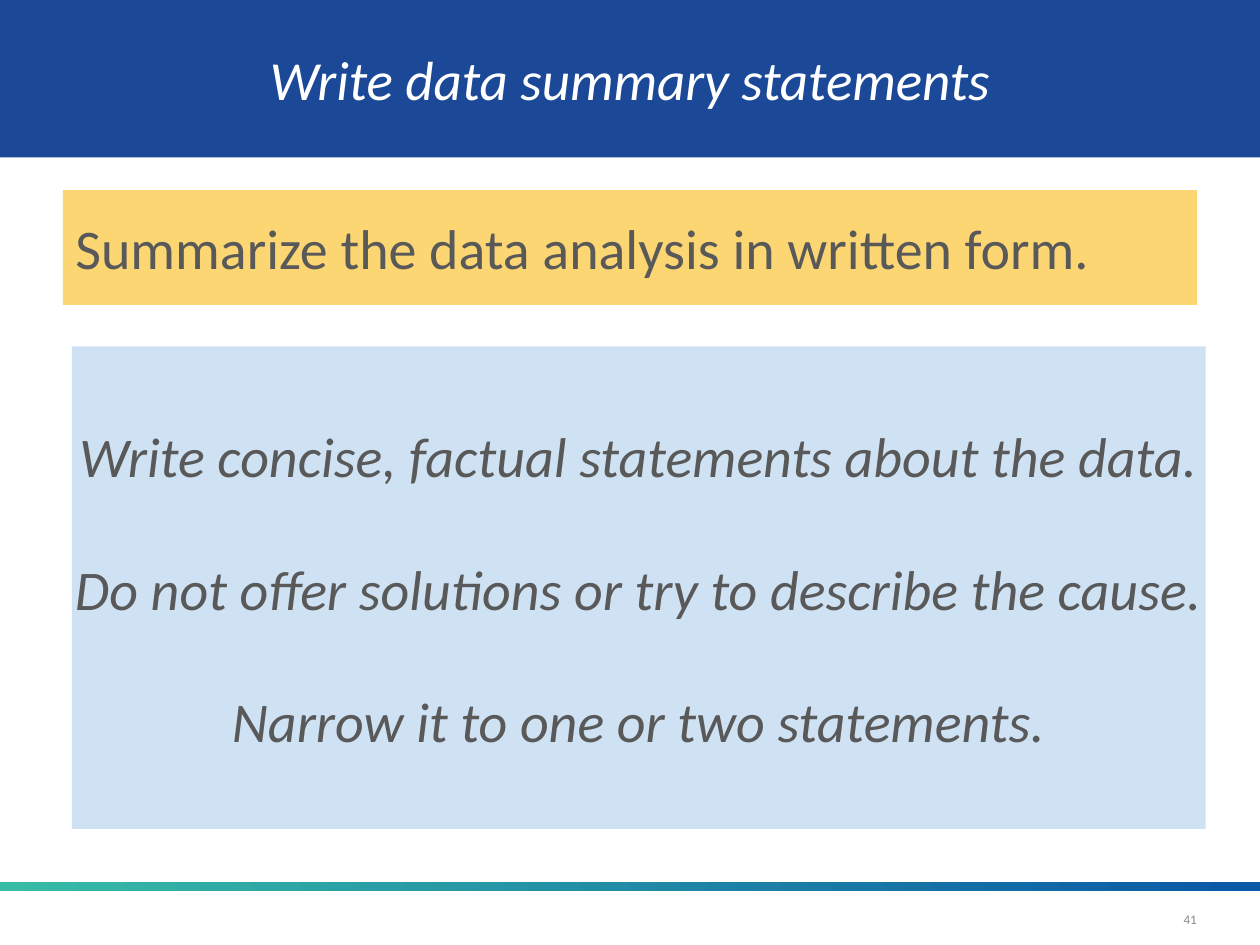
from dataclasses import dataclass

from pptx import Presentation
from pptx.dml.color import RGBColor as RGB
from pptx.enum.shapes import MSO_SHAPE as Shape
from pptx.enum.text import MSO_ANCHOR as Anchor, MSO_AUTO_SIZE as AutoSize, PP_ALIGN as Align
from pptx.util import Inches, Pt


@dataclass(frozen=True)
class Theme:
    font: str = "Calibri"
    title_size: float = 31.5
    body_size: float = 32
    number_size: float = 7.5
    statement_gap: float = 37.3
    navy: RGB = RGB(0x1B, 0x49, 0x97)
    yellow: RGB = RGB(0xFC, 0xD6, 0x72)
    pale_blue: RGB = RGB(0xCF, 0xE2, 0xF3)
    teal: RGB = RGB(0x37, 0xBC, 0xA5)
    blue: RGB = RGB(0x09, 0x59, 0xA7)
    white: RGB = RGB(0xFF, 0xFF, 0xFF)
    text: RGB = RGB(0x59, 0x59, 0x59)
    gray: RGB = RGB(0x89, 0x89, 0x89)


@dataclass(frozen=True)
class Box:
    left: float
    top: float
    width: float
    height: float

    def lengths(self) -> tuple:
        return tuple(Inches(v) for v in (self.left, self.top, self.width, self.height))


@dataclass(frozen=True)
class Panel:
    box: Box
    fill: RGB
    lines: tuple[str, ...]
    inset: float
    align: Align
    italic: bool = False


THEME = Theme()
PANELS = (
    Panel(Box(0.5, 1.51, 9, 0.91), THEME.yellow,
          ("Summarize the data analysis in written form.",), 0.1, Align.LEFT),
    Panel(Box(0.57, 2.75, 9, 3.83), THEME.pale_blue,
          ("Write concise, factual statements about the data.",
           "Do not offer solutions or try to describe the cause.",
           "Narrow it to one or two statements."), 0, Align.CENTER, italic=True),
)


def write(frame, lines: tuple[str, ...], size: float, color: RGB, align: Align,
          italic: bool = False) -> None:
    frame.word_wrap = True
    frame.auto_size = AutoSize.NONE
    frame.vertical_anchor = Anchor.MIDDLE
    for index, line in enumerate(lines):
        paragraph = frame.add_paragraph() if index else frame.paragraphs[0]
        paragraph.text = line
        paragraph.alignment = align
        paragraph.space_before = Pt(THEME.statement_gap if index else 0)
        font = paragraph.font
        font.name, font.size, font.italic = THEME.font, Pt(size), italic
        font.color.rgb = color


def set_insets(frame, inset: float) -> None:
    frame.margin_left = frame.margin_right = Inches(inset)
    frame.margin_top = frame.margin_bottom = Inches(inset)


def add_rectangle(slide, box: Box):
    rectangle = slide.shapes.add_shape(Shape.RECTANGLE, *box.lengths())
    rectangle.shadow.inherit = False
    rectangle.line.fill.background()
    return rectangle


def add_title(slide, text: str) -> None:
    title = slide.shapes.title
    title.left, title.top, title.width, title.height = Box(0, 0, 10, 1.25).lengths()
    title.fill.solid()
    title.fill.fore_color.rgb = THEME.navy
    write(title.text_frame, (text,), THEME.title_size, THEME.white, Align.CENTER, italic=True)


def add_panel(slide, panel: Panel) -> None:
    rectangle = add_rectangle(slide, panel.box)
    rectangle.fill.solid()
    rectangle.fill.fore_color.rgb = panel.fill
    set_insets(rectangle.text_frame, panel.inset)
    write(rectangle.text_frame, panel.lines, THEME.body_size, THEME.text,
          panel.align, panel.italic)


def add_footer(slide, number: str) -> None:
    rule = add_rectangle(slide, Box(0, 7, 10, 0.07))
    rule.fill.gradient()
    rule.fill.gradient_angle = 0
    for stop, color in zip(rule.fill.gradient_stops, (THEME.teal, THEME.blue)):
        stop.color.rgb = color
    page = slide.shapes.add_textbox(*Box(9.2, 7.23, 0.3, 0.13).lengths()).text_frame
    set_insets(page, 0)
    write(page, (number,), THEME.number_size, THEME.gray, Align.RIGHT)


def main() -> None:
    deck = Presentation()
    deck.slide_width, deck.slide_height = Inches(10), Inches(7.5)
    slide = deck.slides.add_slide(deck.slide_layouts.get_by_name("Title Only"))
    add_title(slide, "Write data summary statements")
    add_footer(slide, "41")
    for panel in PANELS:
        add_panel(slide, panel)
    deck.save("out.pptx")


if __name__ == "__main__":
    main()
